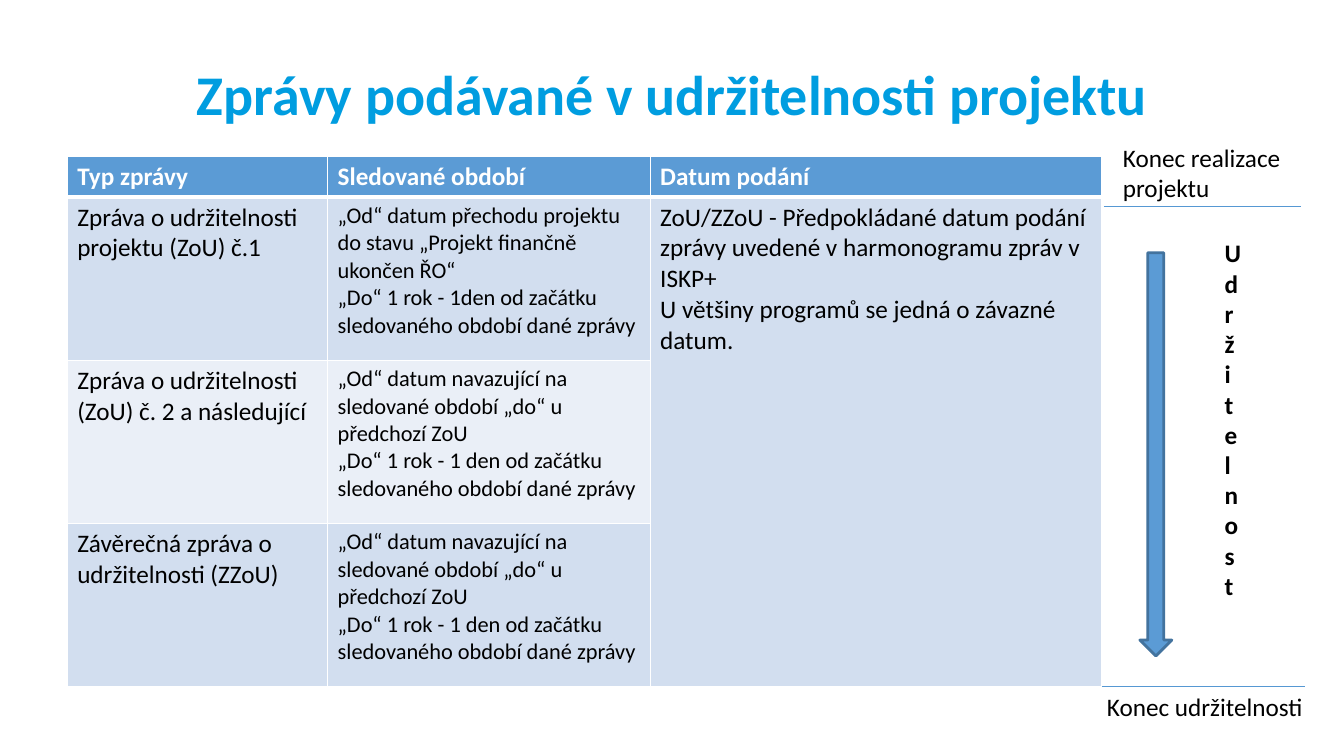
from lxml import etree
from pptx import Presentation
from pptx.dml.color import RGBColor
from pptx.enum.shapes import MSO_CONNECTOR, MSO_SHAPE
from pptx.enum.text import MSO_ANCHOR, PP_ALIGN
from pptx.oxml.ns import qn
from pptx.util import Inches, Pt

LINE, DOWN_ARROW = MSO_CONNECTOR.STRAIGHT, MSO_SHAPE.DOWN_ARROW
MIDDLE, CENTER = MSO_ANCHOR.MIDDLE, PP_ALIGN.CENTER

COLORS = {
    "title": "009DE0", "header": "5B9BD5", "band": "D2DEEF", "light": "EAEFF7",
    "text": "000000", "white": "FFFFFF", "rule": "5698D3", "outline": "43739E",
}
GRID_COLS, GRID_ROWS = 160, 90
TITLE_ONLY = 5


class SlideBuilder:
    """Style and current slide; lengths are columns and rows of the grid."""

    font = "Calibri"

    def __init__(self, prs):
        self.s = prs.slides.add_slide(prs.slide_layouts[TITLE_ONLY])
        self.col = prs.slide_width / GRID_COLS
        self.row = prs.slide_height / GRID_ROWS

    def box(self, x, y, w, h):
        return [int(v) for v in (x * self.col, y * self.row, w * self.col, h * self.row)]

    def color(self, name):
        return RGBColor.from_string(COLORS[name])

    def add_text(self, tf, lines, color="text", size=18, bold=False, align=None):
        formats = {"name": self.font, "size": Pt(size), "bold": bold}
        for i, line in enumerate(lines):
            p = tf.paragraphs[0] if i == 0 else tf.add_paragraph()
            p.alignment = align
            r = p.add_run()
            r.text = line
            for key, value in formats.items():
                setattr(r.font, key, value)
            r.font.color.rgb = self.color(color)

    def title(self, text, *area):
        sp = self.s.shapes.title
        sp.left, sp.top, sp.width, sp.height = self.box(*area)
        sp.text_frame.vertical_anchor = MIDDLE
        self.add_text(sp.text_frame, [text], "title", 40, True, CENTER)

    def label(self, text, *area, bold=False, vert=None):
        tf = self.s.shapes.add_textbox(*self.box(*area)).text_frame
        tf.word_wrap = True
        if vert:
            tf._txBody.bodyPr.set("vert", vert)
        self.add_text(tf, [text], bold=bold)

    def rule(self, x1, x2, y):
        left, top, right, bottom = self.box(x1, y, x2, y)
        line = self.s.shapes.add_connector(LINE, left, top, right, bottom)
        line.line.color.rgb = self.color("rule")
        line.line.width = Pt(0.75)
        etree.SubElement(line._element.spPr, qn("a:effectLst"))

    def arrow(self, *area):
        sp = self.s.shapes.add_shape(DOWN_ARROW, *self.box(*area))
        sp.shadow.inherit = False
        sp.fill.solid()
        sp.fill.fore_color.rgb = self.color("header")
        sp.line.color.rgb = self.color("outline")
        sp.line.width = Pt(2)

    def borders(self, cell, widths):
        tc_pr = cell._tc.get_or_add_tcPr()
        for side, width in widths.items():
            ln = etree.SubElement(tc_pr, qn(f"a:ln{side}"), w=str(Pt(width)))
            fill = etree.SubElement(ln, qn("a:solidFill"))
            etree.SubElement(fill, qn("a:srgbClr"), val=COLORS["white"])

    def table(self, x, y, widths, heights, rows):
        area = self.box(x, y, sum(widths), sum(heights))
        table = self.s.shapes.add_table(len(rows), len(widths), *area).table
        for column, width in zip(table.columns, widths):
            column.width = int(width * self.col)
        for row, height in zip(table.rows, heights):
            row.height = int(height * self.row)
        for i, row in enumerate(rows):
            fill = "header" if i == 0 else "band" if i % 2 else "light"
            for j, lines in enumerate(row):
                cell = table.cell(i, j)
                self.borders(cell, {"L": 1, "R": 1, "T": 3 if i == 1 else 1,
                                    "B": 3 if i == 0 else 1})
                cell.fill.solid()
                cell.fill.fore_color.rgb = self.color(fill)
                self.add_text(cell.text_frame, lines, "text" if i else "white",
                              16 if i and j == 1 else 18, i == 0)
        return table


def main():
    prs = Presentation()
    prs.slide_width, prs.slide_height = Inches(13.33), Inches(7.5)
    b = SlideBuilder(prs)
    b.title("Zprávy podávané v udržitelnosti projektu", 8, 3.6, 144, 15)

    # Table of reports
    following = ["„Od“ datum navazující na sledované období „do“ u předchozí ZoU",
                 "„Do“ 1 rok - 1 den od začátku sledovaného období dané zprávy"]
    rows = [
        [["Typ zprávy"], ["Sledované období"], ["Datum podání"]],
        [["Zpráva o udržitelnosti projektu (ZoU) č.1"],
         ["„Od“ datum přechodu projektu do stavu „Projekt finančně ukončen ŘO“",
          "„Do“ 1 rok - 1den od začátku sledovaného období dané zprávy"],
         ["ZoU/ZZoU - Předpokládané datum podání zprávy uvedené v harmonogramu zpráv v ISKP+",
          "U většiny programů se jedná o závazné datum."]],
        [["Zpráva o udržitelnosti (ZoU) č. 2 a následující"], following, []],
        [["Závěrečná zpráva o udržitelnosti (ZZoU)"], following, []],
    ]
    table = b.table(8, 18.6, [31, 38.4, 53.8], [4.8] + [19.43] * 3, rows)
    table.cell(1, 2).merge(table.cell(3, 2))

    # Timeline beside the table
    b.rule(131.4, 154.9, 24.6)
    b.label("Konec realizace projektu", 132.5, 16.3, 22.4, 8.5)
    b.arrow(135.7, 30.1, 3.8, 48)
    b.label("Udržitelnost", 144.6, 27.7, 11.3, 55.3, bold=True, vert="wordArtVert")
    b.rule(131.2, 155.3, 81.7)
    b.label("Konec udržitelnosti", 130.6, 81.7, 25.8, 4.8)

    prs.save("out.pptx")


if __name__ == "__main__":
    main()
